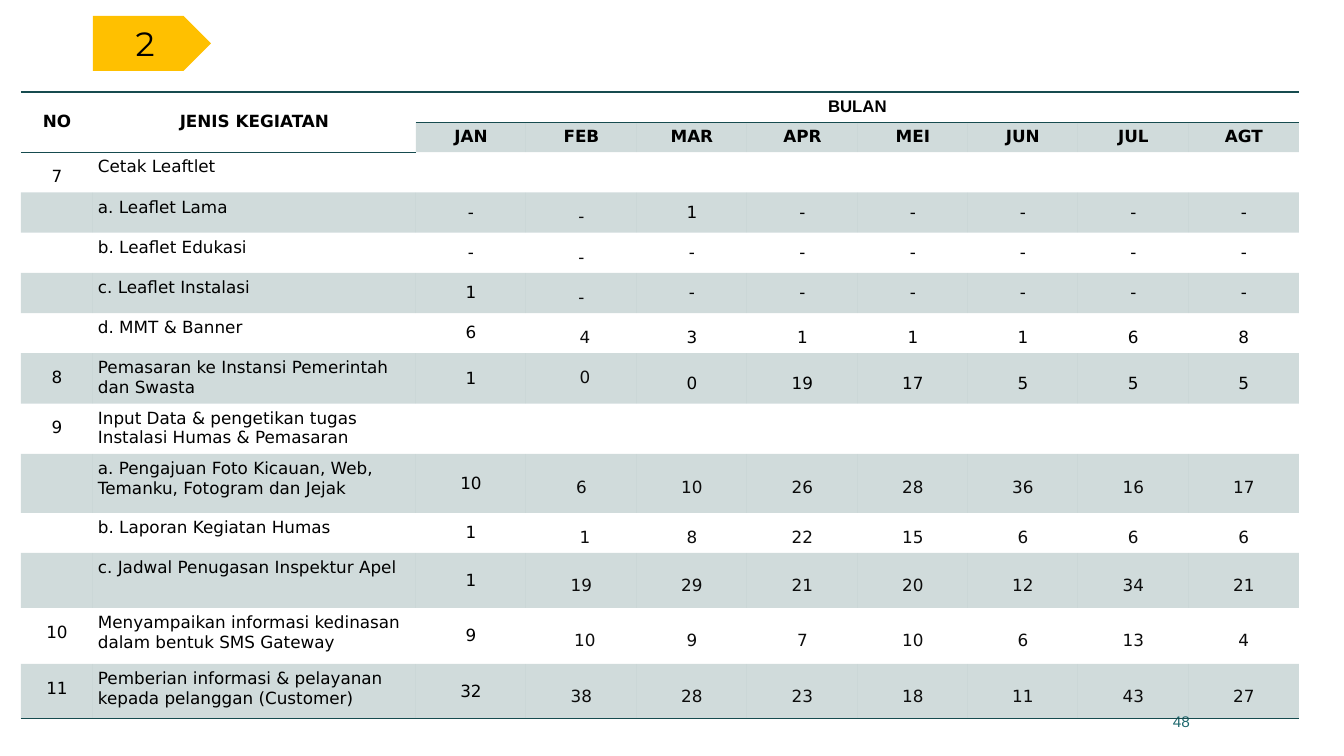
from lxml.etree import SubElement
from pptx import Presentation
from pptx.dml.color import RGBColor
from pptx.enum.shapes import MSO_SHAPE
from pptx.enum.text import MSO_ANCHOR, PP_ALIGN
from pptx.oxml.ns import qn
from pptx.util import Pt

SCALE = 914400 / 100.8
FONT = "DejaVu Sans"
BLACK, INK, TEAL = "000000", "0C0C0C", "164B4F"
PLAIN = "{2D5ABB26-0587-4C30-8999-92F81FD0307C}"  # no style, no grid
TOP, MID = MSO_ANCHOR.TOP, MSO_ANCHOR.MIDDLE

MONTHS = ["JAN", "FEB", "MAR", "APR", "MEI", "JUN", "JUL", "AGT"]
# number, activity, monthly values, row height
ROWS = [
    ("7", "Cetak Leaftlet", "", 40),
    ("", "a. Leaflet Lama", "- - 1 - - - - -", 39),
    ("", "b. Leaflet Edukasi", "- - - - - - - -", 40),
    ("", "c. Leaflet Instalasi", "1 - - - - - - -", 39),
    ("", "d. MMT & Banner", "6 4 3 1 1 1 6 8", 40),
    ("8", "Pemasaran ke Instansi Pemerintah dan Swasta",
     "1 0 0 19 17 5 5 5", 50),
    ("9", "Input Data & pengetikan tugas Instalasi Humas & Pemasaran", "", 49),
    ("", "a. Pengajuan Foto Kicauan, Web, Temanku, Fotogram dan Jejak",
     "10 6 10 26 28 36 16 17", 59),
    ("", "b. Laporan Kegiatan Humas", "1 1 8 22 15 6 6 6", 40),
    ("", "c. Jadwal Penugasan Inspektur Apel", "1 19 29 21 20 12 34 21", 55),
    ("10", "Menyampaikan informasi kedinasan dalam bentuk SMS Gateway",
     "9 10 9 7 10 6 13 4", 56),
    ("11", "Pemberian informasi & pelayanan kepada pelanggan (Customer)",
     "32 38 28 23 18 11 43 27", 55),
]
HEAD = [29, 30]
SHIFTED = {4, 5, 8, 10}  # rows whose FEB value is indented
DASHED = 4  # rows before this one keep single spacing


def px(n):
    return round(n * SCALE)


def color(code):
    return RGBColor.from_string(code)


def apply(item, values):
    for name, value in values.items():
        setattr(item, name, value)


def write(frame, text, size=12, font=FONT, tint=BLACK, bold=False,
          align=PP_ALIGN.CENTER, space=None):
    para = frame.paragraphs[0]
    apply(para, {"alignment": align, "line_spacing": space})
    if not text:
        SubElement(para._p, qn("a:endParaRPr"), sz=str(size * 100))
        return para
    run = para.add_run()
    run.text = text
    apply(run.font, {"size": Pt(size), "name": font, "bold": bold})
    run.font.color.rgb = color(tint)
    return para


def edge(cell, *sides):
    props = cell._tc.get_or_add_tcPr()
    for side in sides:
        line = SubElement(props, qn("a:ln" + side), w=str(Pt(1)))
        fill = SubElement(line, qn("a:solidFill"))
        SubElement(fill, qn("a:srgbClr"), val=TEAL)


def shade(cell):
    cell.fill.solid()
    cell.fill.fore_color.rgb = color(TEAL)
    tint = cell._tc.tcPr.find(qn("a:solidFill"))[0]
    SubElement(tint, qn("a:alpha"), val="20000")


def put(cell, text, anchor=MID, **style):
    inset = px(5)
    apply(cell, {"margin_left": inset, "margin_right": inset,
                 "margin_top": inset, "margin_bottom": inset,
                 "vertical_anchor": anchor})
    return write(cell.text_frame, text, **style)


def add_grid(slide):
    marks = [round(883 * i / 8) for i in range(9)]
    widths = [72, 323] + [b - a for a, b in zip(marks, marks[1:])]
    highs = HEAD + [row[3] for row in ROWS]
    frame = slide.shapes.add_table(len(highs), len(widths), px(21), px(92),
                                   px(sum(widths)), px(sum(highs)))
    table = frame.table
    apply(table, {"first_row": False, "horz_banding": False})
    table._tbl.tblPr.find(qn("a:tableStyleId")).text = PLAIN
    for col, width in zip(table.columns, widths):
        col.width = px(width)
    for row, high in zip(table.rows, highs):
        row.height = px(high)
    return table


def fill_head(table):
    for c in range(10):
        edge(table.cell(0, c), "T", "B")
    for c, label in enumerate(["NO", "JENIS KEGIATAN"]):
        edge(table.cell(1, c), "B")
        table.cell(0, c).merge(table.cell(1, c))
        put(table.cell(0, c), label, bold=True)
    table.cell(0, 2).merge(table.cell(0, 9))
    put(table.cell(0, 2), "BULAN", font="Arial", bold=True)
    for c, month in enumerate(MONTHS, 2):
        put(table.cell(1, c), month, bold=True)
        shade(table.cell(1, c))


def fill_body(table):
    for i, (num, task, data, _) in enumerate(ROWS):
        cells = [table.cell(i + 2, c) for c in range(10)]
        put(cells[0], num, TOP, space=1.5)
        put(cells[1], task, TOP, align=PP_ALIGN.LEFT)
        values = data.split() or [""] * 8
        loose = 1.5 if i >= DASHED else None
        put(cells[2], values[0])
        feb = put(cells[3], values[1], TOP if i < 6 else MID,
                  tint=INK, space=1.5 if data else None)
        if i in SHIFTED:
            feb._p.get_or_add_pPr().set("marL", str(px(7)))
        for cell, value in zip(cells[4:], values[2:]):
            put(cell, value, tint=INK if i >= 7 else BLACK, space=loose)
        for cell in cells:
            if i == len(ROWS) - 1:
                edge(cell, "B")
            if i % 2:
                shade(cell)


def add_badge(slide):
    badge = slide.shapes.add_shape(MSO_SHAPE.PENTAGON, px(93), px(16),
                                   px(118), px(55))
    badge.shadow.inherit = False
    badge.fill.solid()
    badge.fill.fore_color.rgb = color("FFC000")
    badge.line.fill.background()
    badge.text_frame.vertical_anchor = MID
    write(badge.text_frame, "2", 24, "Montserrat")


def add_number(slide):
    box = slide.shapes.add_textbox(px(887), px(701), px(313), px(40))
    apply(box.text_frame, {"word_wrap": True, "vertical_anchor": MID})
    write(box.text_frame, "48", 11, "Arial", "1F696F", align=PP_ALIGN.RIGHT)


def main():
    deck = Presentation()
    apply(deck, {"slide_width": px(1344), "slide_height": px(756)})
    slide = deck.slides.add_slide(deck.slide_layouts[6])
    add_number(slide)
    # Activity table
    table = add_grid(slide)
    fill_head(table)
    fill_body(table)
    # Section marker
    add_badge(slide)
    deck.save("out.pptx")


if __name__ == "__main__":
    main()
